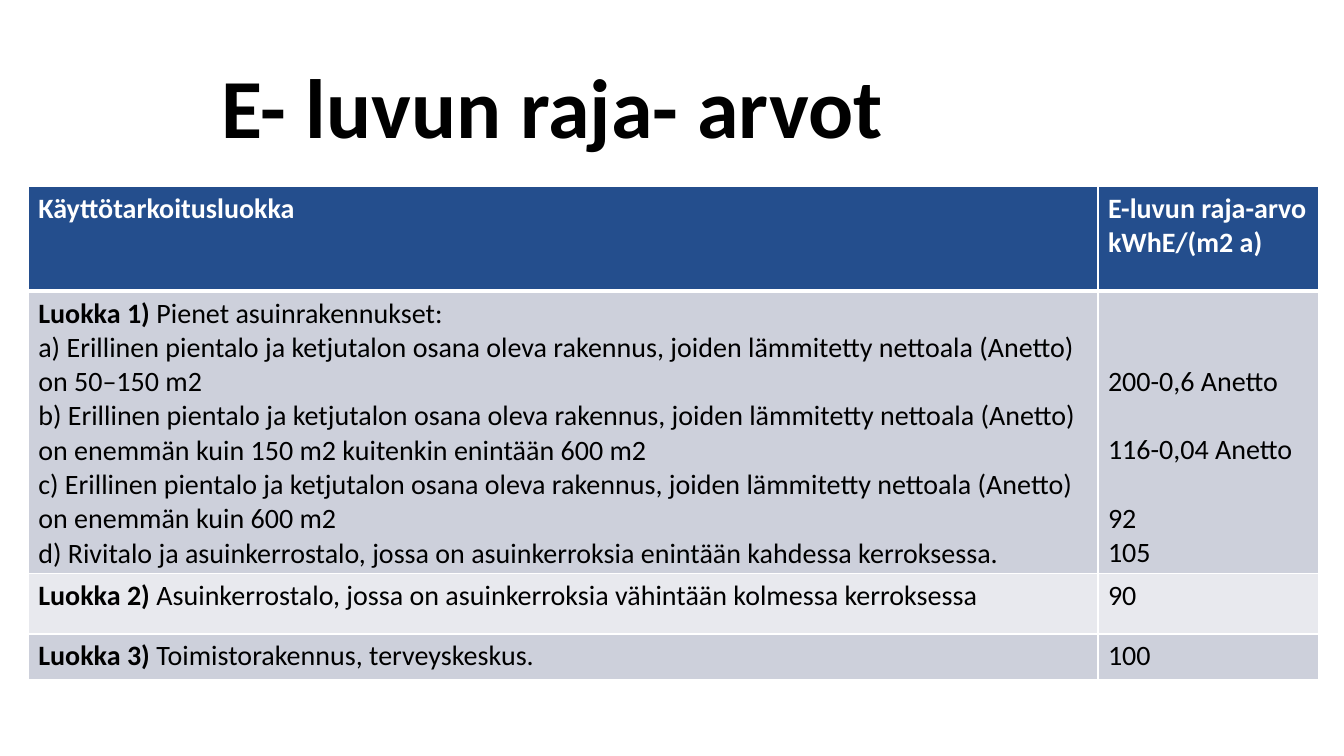
from lxml.etree import SubElement
from pptx import Presentation
from pptx.dml.color import RGBColor as Color
from pptx.enum.text import MSO_ANCHOR as Anchor
from pptx.oxml.ns import qn
from pptx.util import Inches, Pt

COLORS = {"header": "244E8D", "dark band": "CDD0DB", "light band": "E8E9EE",
          "ink": "000000", "white": "FFFFFF"}
TEXT_SIZE = 20
LINE = 1.22 * TEXT_SIZE  # height of one text line in points


def add_text(para, text, size=TEXT_SIZE, color="ink", bold=False):
    span = para.add_run()
    span.text = text
    span.font.name = "Calibri"
    span.font.size = Pt(size)
    span.font.bold = bold
    span.font.color.rgb = Color.from_string(COLORS[color])


def add_border(cell, side, width):
    line = SubElement(cell._tc.get_or_add_tcPr(), qn(f"a:ln{side}"), w=str(Pt(width)))
    fill = SubElement(line, qn("a:solidFill"))
    SubElement(fill, qn("a:srgbClr"), val=COLORS["white"])


deck = Presentation()
deck.slide_width, deck.slide_height = Inches(13.33), Inches(7.5)
page = deck.slides.add_slide(deck.slide_layouts[6])

# Title
box = page.shapes.add_textbox(Inches(2.1), 0, Inches(9.57), Inches(2.21))
box.text_frame.word_wrap = True
box.text_frame.vertical_anchor = Anchor.MIDDLE
title = box.text_frame.paragraphs[0]
title.line_spacing = 0.9
add_text(title, "E- luvun raja- arvot", size=60, bold=True)

# Table content: each paragraph is (bold part, plain part, blank lines above)
house = ("Erillinen pientalo ja ketjutalon osana oleva rakennus, "
         "joiden lämmitetty nettoala (Anetto) on ")
rows = [
    ("header", 1.04, [("Käyttötarkoitusluokka", "", 0)],
     [("E-luvun raja-arvo kWhE/(m2 a)", "", 0)]),
    ("dark band", 2.8,
     [("Luokka 1) ", "Pienet asuinrakennukset:", 0),
      ("", f"a) {house}50–150 m2", 0),
      ("", f"b) {house}enemmän kuin 150 m2 kuitenkin enintään 600 m2", 0),
      ("", f"c) {house}enemmän kuin 600 m2", 0),
      ("", "d) Rivitalo ja asuinkerrostalo, jossa on asuinkerroksia "
           "enintään kahdessa kerroksessa.", 0)],
     [("", "200-0,6 Anetto", 2), ("", "116-0,04 Anetto", 1),
      ("", "92", 1), ("", "105", 0)]),
    ("light band", 0.6,
     [("Luokka 2) ", "Asuinkerrostalo, jossa on asuinkerroksia "
                     "vähintään kolmessa kerroksessa", 0)],
     [("", "90", 0)]),
    ("dark band", 0.45,
     [("Luokka 3) ", "Toimistorakennus, terveyskeskus.", 0)],
     [("", "100", 0)]),
]

# Table grid
table = page.shapes.add_table(len(rows), 2, Inches(0.28), Inches(1.85),
                              Inches(12.8), Inches(4.89)).table
for column, width in zip(table.columns, (10.61, 2.19)):
    column.width = Inches(width)

# Cells
for r, (band, height, *contents) in enumerate(rows):
    table.rows[r].height = Inches(height)
    color = "white" if band == "header" else "ink"
    for c, paragraphs in enumerate(contents):
        cell = table.cell(r, c)
        for side in "LRTB":
            under_header = (r, side) in ((0, "B"), (1, "T"))
            add_border(cell, side, 3 if under_header else 1)
        cell.fill.solid()
        cell.fill.fore_color.rgb = Color.from_string(COLORS[band])
        for i, (strong, plain, gap) in enumerate(paragraphs):
            para = cell.text_frame.paragraphs[0] if i == 0 else cell.text_frame.add_paragraph()
            if i == 0:
                cell.margin_top = Inches(0.05) + Pt(gap * LINE)
            else:
                para.space_before = Pt(gap * LINE)
            for text, bold in ((strong, True), (plain, False)):
                if text:
                    add_text(para, text, color=color, bold=bold)

deck.save("out.pptx")
